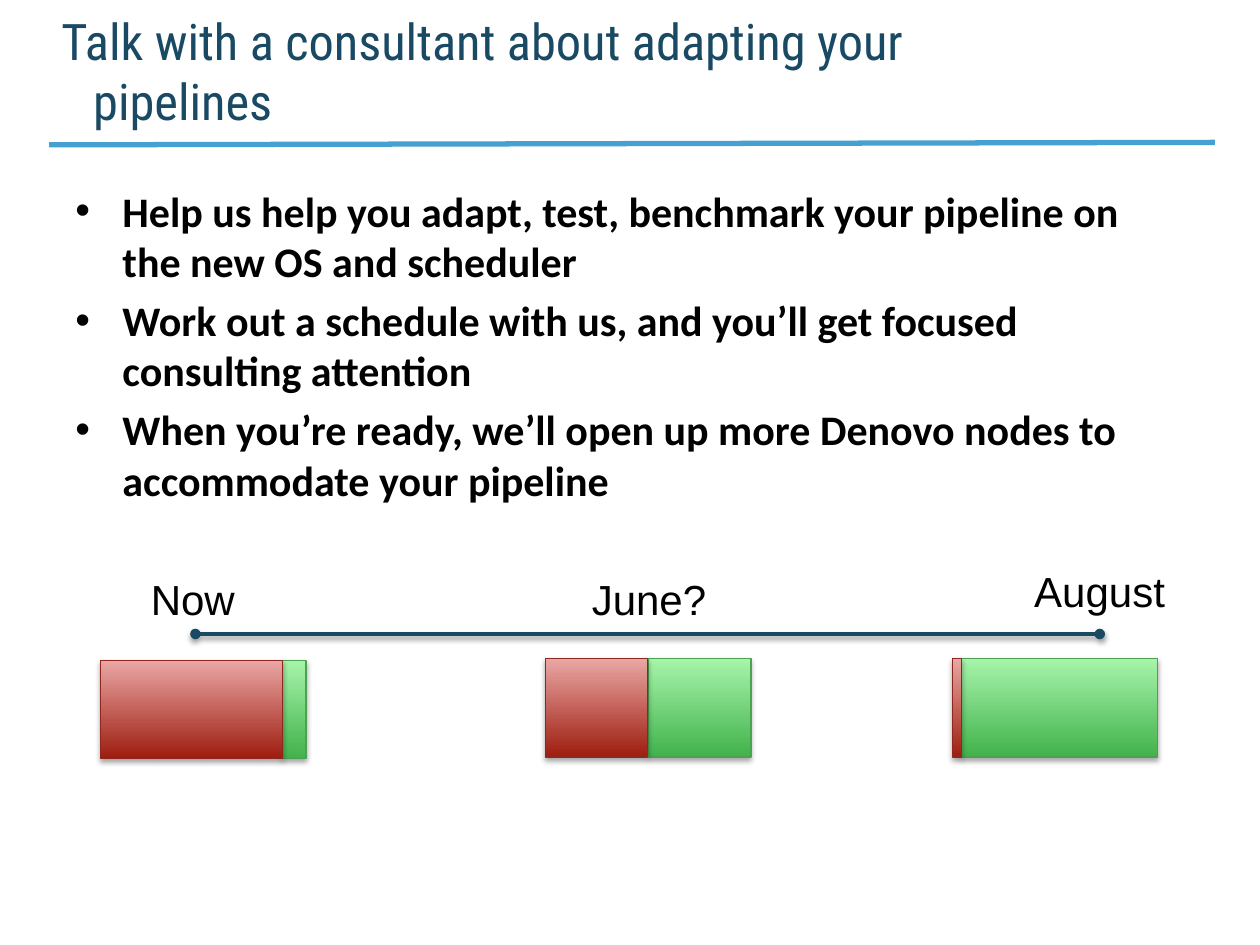
from lxml.etree import SubElement
from pptx import Presentation
from pptx.dml.color import RGBColor
from pptx.enum.shapes import MSO_CONNECTOR as Link, MSO_SHAPE as Shape
from pptx.enum.text import MSO_ANCHOR as Anchor
from pptx.oxml.ns import qn
from pptx.util import Cm, Pt

BLACK = RGBColor(0x00, 0x00, 0x00)
NAVY = RGBColor(0x19, 0x49, 0x63)
SKY = RGBColor(0x46, 0xA0, 0xD0)
# Each set: bottom colour, top colour, outline
RED = [RGBColor.from_string(c) for c in ("9E1D0F", "E9A7A5", "8E271D")]
GREEN = [RGBColor.from_string(c) for c in ("42B24B", "A7F4AB", "4BA352")]

BAR_W, BAR_H = 4.14, 1.98
# Left, top, red width, green width
BARS = [
    (2.03, 13.31, 3.66, 0.48),
    (11.0, 13.28, 2.06, 2.06),
    (19.2, 13.28, 0.18, 3.96),
]
DATES = [
    ("Now", 2.79, 11.43, 2.26),
    ("August", 20.6, 11.28, 3.23),
    ("June?", 11.68, 11.43, 2.84),
]
POINTS = [
    "Help us help you adapt, test, benchmark your pipeline on the new OS and scheduler",
    "Work out a schedule with us, and you’ll get focused consulting attention",
    "When you’re ready, we’ll open up more Denovo nodes to accommodate your pipeline",
]


def style(font, name, size, color, bold=False):
    font.name, font.size, font.bold = name, Pt(size), bold
    font.color.rgb = color


def add_box(slide, x, y, w, h, wrap=True):
    box = slide.shapes.add_textbox(Cm(x), Cm(y), Cm(w), Cm(h))
    box.text_frame.word_wrap = wrap
    return box.text_frame


def indent(para, size):
    """Set a hanging indent."""
    props = para._p.get_or_add_pPr()
    props.set("marL", str(Cm(size)))
    props.set("indent", str(-Cm(size)))
    return props


def add_shade(effects, blur, dist, alpha):
    """Put a soft black shadow straight below the object."""
    shade = SubElement(effects, qn("a:outerShdw"), blurRad=str(Pt(blur)),
                       dist=str(Pt(dist)), dir="5400000", rotWithShape="0")
    color = SubElement(shade, qn("a:srgbClr"), val="000000")
    SubElement(color, qn("a:alpha"), val=str(alpha * 1000))


def add_line(slide, x1, y1, x2, y2, color, width, dots=False):
    line = slide.shapes.add_connector(
        Link.STRAIGHT, Cm(x1), Cm(y1), Cm(x2), Cm(y2))
    line.line.color.rgb = color
    line.line.width = Pt(width)
    if dots:
        stroke = line.line._get_or_add_ln()
        for end in ("a:headEnd", "a:tailEnd"):
            SubElement(stroke, qn(end), type="oval")
    effects = SubElement(line._element.spPr, qn("a:effectLst"))
    if dots:
        add_shade(effects, 3.1, 1.6, 38)


def add_bar(slide, x, y, w, colors):
    bar = slide.shapes.add_shape(Shape.RECTANGLE, Cm(x), Cm(y), Cm(w), Cm(BAR_H))
    bar.fill.gradient()
    bar.fill.gradient_angle = 90
    low, high, edge = colors
    for stop, color, pos in zip(bar.fill.gradient_stops, (low, high), (0, 1)):
        stop.color.rgb = color
        stop.position = pos
    bar.line.color.rgb = edge
    bar.line.width = Pt(0.75)
    bar.shadow.inherit = False
    add_shade(bar._element.spPr.find(qn("a:effectLst")), 3.1, 1.8, 35)


def add_title(slide, text):
    frame = add_box(slide, 0.99, 0.51, 18.95, 2.13)
    frame.vertical_anchor = Anchor.BOTTOM
    frame.margin_top = frame.margin_bottom = 0
    frame.text = text
    para = frame.paragraphs[0]
    indent(para, 0.64)
    style(para.runs[0].font, "Roboto Condensed", 28.8, NAVY)


def add_list(slide, items):
    frame = add_box(slide, 1.27, 3.61, 22.86, 13.41)
    frame.text = "\n".join(items)
    for num, para in enumerate(frame.paragraphs):
        if num:
            para.space_before = Pt(4.8)
        props = indent(para, 0.95)
        SubElement(props, qn("a:buFont"), typeface="Arial")
        SubElement(props, qn("a:buChar"), char="•")
        style(para.runs[0].font, "Calibri", 24, BLACK, True)


def add_date(slide, text, x, y, w):
    frame = add_box(slide, x, y, w, 1.27, wrap=False)
    frame.text = text
    style(frame.paragraphs[0].runs[0].font, "Arial", 24, BLACK)


def main():
    deck = Presentation()
    deck.slide_width, deck.slide_height = Cm(25.4), Cm(19.05)
    slide = deck.slides.add_slide(deck.slide_layouts[6])

    add_line(slide, 0.99, 2.92, 24.49, 2.87, SKY, 3)
    add_title(slide, "Talk with a consultant about adapting your pipelines")
    add_list(slide, POINTS)
    for x, y, red, green in BARS:
        add_bar(slide, x + BAR_W - green, y, green, GREEN)
        add_bar(slide, x, y, red, RED)
    add_line(slide, 3.94, 12.78, 22.17, 12.78, NAVY, 2, dots=True)
    for date in DATES:
        add_date(slide, *date)

    deck.save("out.pptx")


if __name__ == "__main__":
    main()
